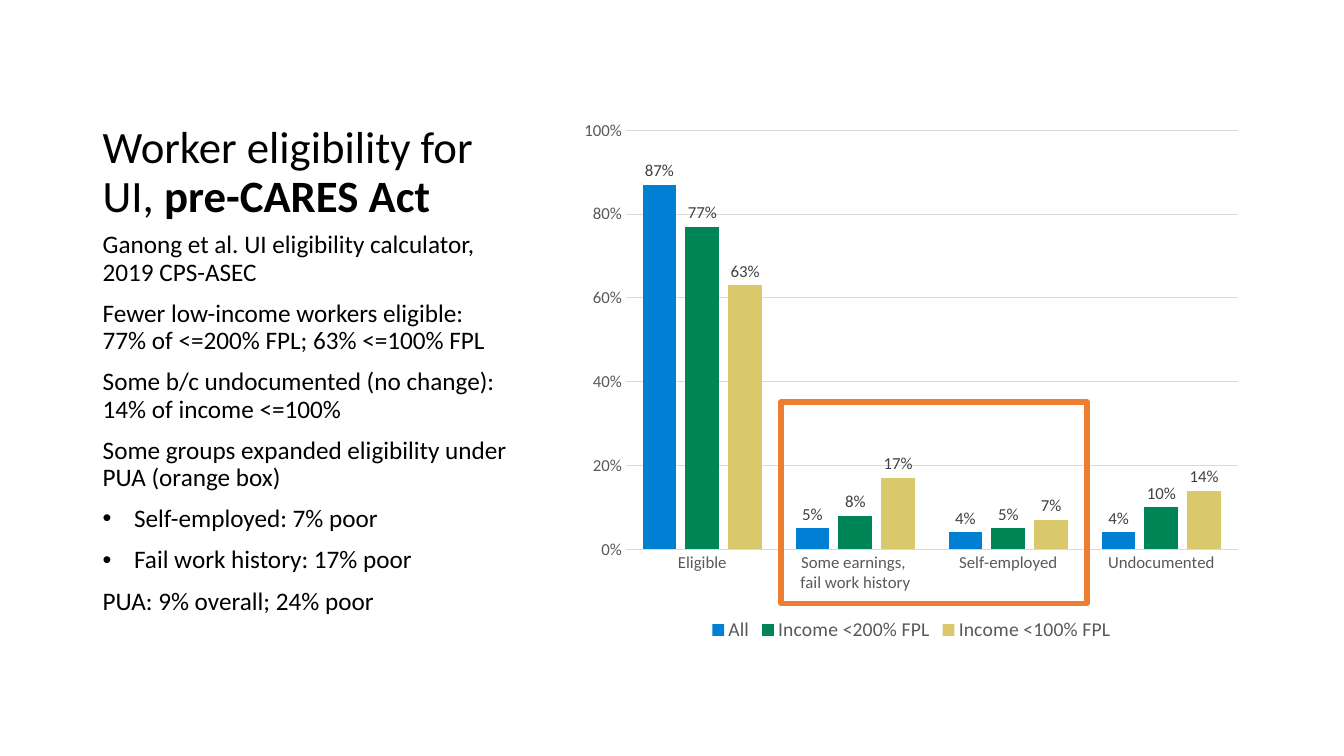
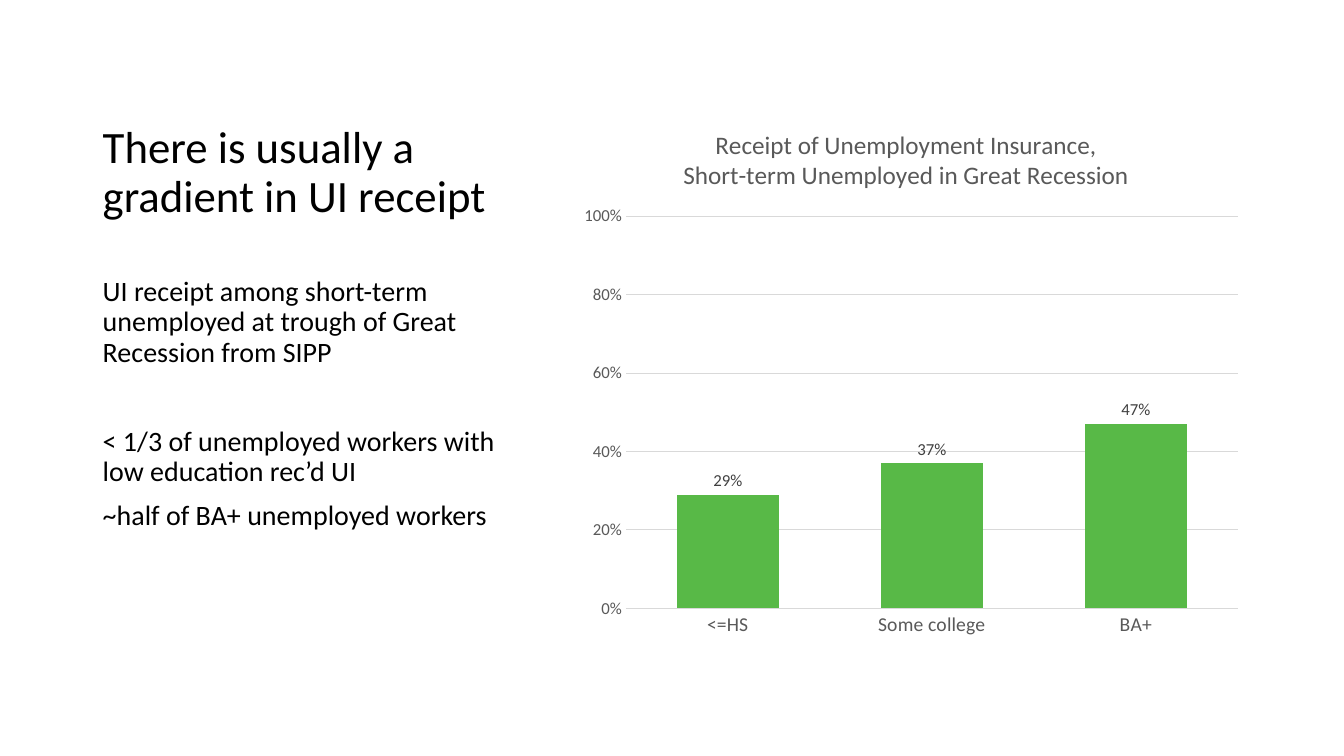
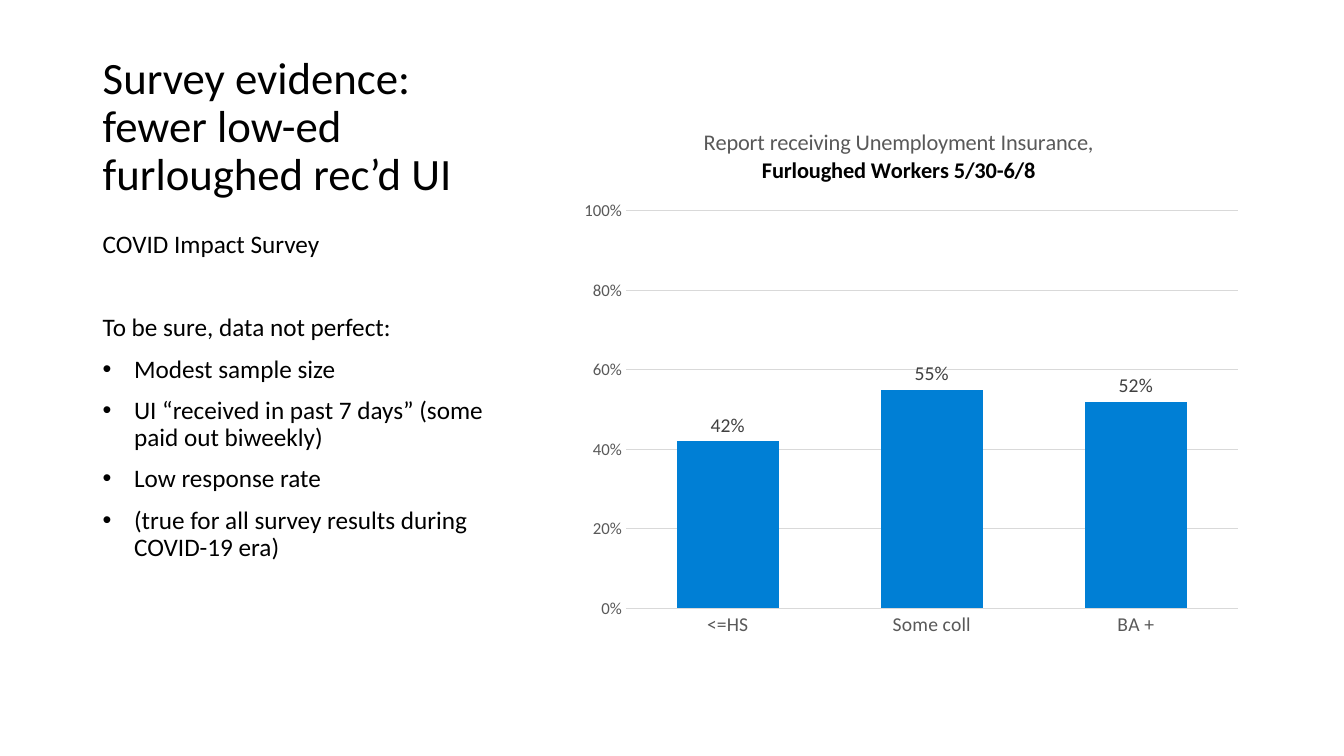
from pptx import Presentation
from pptx.chart.data import CategoryChartData
from pptx.dml.color import RGBColor
from pptx.enum.chart import XL_CHART_TYPE as ChartType, XL_LABEL_POSITION as LabelPos
from pptx.enum.chart import XL_LEGEND_POSITION as LegendPos, XL_TICK_MARK as Tick
from pptx.enum.shapes import MSO_SHAPE as Shape
from pptx.enum.text import MSO_ANCHOR as Anchor
from pptx.oxml.ns import qn
from pptx.oxml.xmlchemy import OxmlElement
from pptx.util import Cm, Pt

COLORS = {
    "text": "000000",
    "muted": "595959",
    "label": "404040",
    "rule": "D9D9D9",
    "blue": "007FD5",
    "forest": "008656",
    "sand": "D9C86C",
    "green": "58B947",
    "orange": "ED7D31",
}


def rgb(name):
    return RGBColor.from_string(COLORS[name])


class Deck:
    """Holds the shared style and the slide being built."""

    FONT = "Calibri"
    LEFT, COLUMN = Cm(2.34), Cm(10.92)
    TITLE_TOP, TITLE_HEIGHT = Cm(1.27), Cm(4.45)
    BODY_TOP, BODY_HEIGHT = Cm(5.72), Cm(10.59)
    CHART = Cm(14.4), Cm(2.74), Cm(17.14), Cm(13.54)
    INDENT = Cm(0.79)

    def __init__(self):
        self.prs = Presentation()
        self.prs.slide_width, self.prs.slide_height = Cm(33.87), Cm(19.05)
        self.slide = None

    def new_slide(self):
        self.slide = self.prs.slides.add_slide(self.prs.slide_layouts[6])

    def style(self, font, size, color="text", bold=False):
        font.name, font.size, font.bold = self.FONT, Pt(size), bold
        font.color.rgb = rgb(color)

    def add_run(self, paragraph, text, size, color="text", bold=False):
        run = paragraph.add_run()
        run.text = text
        self.style(run.font, size, color, bold)

    def text_frame(self, top, height):
        frame = self.slide.shapes.add_textbox(self.LEFT, top, self.COLUMN, height).text_frame
        frame.word_wrap = True
        return frame

    def title(self, text, strong="", anchor=Anchor.BOTTOM):
        frame = self.text_frame(self.TITLE_TOP, self.TITLE_HEIGHT)
        frame.vertical_anchor = anchor
        heading = frame.paragraphs[0]
        heading.line_spacing = 0.9
        self.add_run(heading, text, 32)
        if strong:
            self.add_run(heading, strong, 32, bold=True)

    def body(self, points, size, bullets=(), gaps=(), top_inset=0.13):
        frame = self.text_frame(self.BODY_TOP, self.BODY_HEIGHT)
        frame.margin_top = Cm(top_inset)
        for index, point in enumerate(points):
            paragraph = frame.add_paragraph() if index else frame.paragraphs[0]
            paragraph.line_spacing = 0.9
            blank_line = 1.1 * size + 10 if index in gaps else 0
            paragraph.space_before = Pt(10 + blank_line)
            for part, line in enumerate(point.split("\n")):
                if part:
                    paragraph.add_line_break()
                self.add_run(paragraph, line, size)
            if index in bullets:
                self.bullet(paragraph)

    def bullet(self, paragraph):
        props = paragraph._p.get_or_add_pPr()
        props.set("marL", str(self.INDENT))
        props.set("indent", str(-self.INDENT))
        face = OxmlElement("a:buFont")
        face.set("typeface", "Arial")
        mark = OxmlElement("a:buChar")
        mark.set("char", "•")
        props.extend([face, mark])

    def place(self, parent, position, **sides):
        old = parent.find(qn("c:layout"))
        if old is not None:
            parent.remove(old)
        layout, manual = OxmlElement("c:layout"), OxmlElement("c:manualLayout")
        settings = {"xMode": "edge", "yMode": "edge", **sides}
        if "w" in sides:
            settings = {"layoutTarget": "inner", **settings}
        for tag, value in settings.items():
            item = OxmlElement(f"c:{tag}")
            item.set("val", str(value))
            manual.append(item)
        layout.append(manual)
        parent.insert(position, layout)

    def columns(self, categories, series, plot_top, plot_height, category_size=14, label_size=12):
        data = CategoryChartData(number_format="0%")
        data.categories = categories
        for name, values, _ in series:
            data.add_series(name, values)
        chart = self.slide.shapes.add_chart(ChartType.COLUMN_CLUSTERED, *self.CHART, data).chart
        self.style(chart.font, 10)
        chart.has_title = chart.has_legend = False
        plot = chart.plots[0]
        plot.gap_width, plot.overlap, plot.vary_by_categories = 100, -27, False
        for bars, (_, _, color) in zip(plot.series, series):
            bars.format.fill.solid()
            bars.format.fill.fore_color.rgb = rgb(color)
            bars.invert_if_negative = False
            labels = bars.data_labels
            labels.show_value, labels.position = True, LabelPos.OUTSIDE_END
            labels.number_format, labels.number_format_is_linked = "0%", False
            self.style(labels.font, label_size, "label")
        self.axes(chart, category_size)
        area = chart.element.find(".//" + qn("c:plotArea"))
        self.place(area, 0, x=0.08, y=plot_top, w=0.9, h=plot_height)
        return chart

    def axes(self, chart, category_size):
        across, up = chart.category_axis, chart.value_axis
        for axis, size in ((across, category_size), (up, 12)):
            axis.major_tick_mark = axis.minor_tick_mark = Tick.NONE
            self.style(axis.tick_labels.font, size, "muted")
        up.minimum_scale, up.maximum_scale, up.major_unit = 0, 1, 0.2
        up.tick_labels.number_format = "0%"
        up.tick_labels.number_format_is_linked = False
        up.has_major_gridlines = True
        up.format.line.fill.background()
        for line in (across.format.line, up.major_gridlines.format.line):
            line.color.rgb, line.width = rgb("rule"), Pt(0.75)

    def legend(self, chart):
        chart.has_legend = True
        chart.legend.position = LegendPos.BOTTOM
        chart.legend.include_in_layout = False
        self.style(chart.legend.font, 14, "muted")

    def chart_title(self, chart, lines, size, left):
        chart.has_title = True
        frame = chart.chart_title.text_frame
        for index, (text, color, bold) in enumerate(lines):
            paragraph = frame.add_paragraph() if index else frame.paragraphs[0]
            self.add_run(paragraph, text, size, color, bold)
        self.place(chart.chart_title.element, 1, x=left, y=0.03)

    def highlight(self, left, top, width, height):
        frame = self.slide.shapes.add_shape(Shape.RECTANGLE, left, top, width, height)
        frame.shadow.inherit = False
        frame.fill.background()
        frame.line.color.rgb, frame.line.width = rgb("orange"), Pt(4)


def eligibility(deck):
    deck.new_slide()
    deck.title("Worker eligibility for UI, ", "pre-CARES Act")
    deck.body([
        "Ganong et al. UI eligibility calculator, 2019 CPS-ASEC",
        "Fewer low-income workers eligible:\n77% of <=200% FPL; 63% <=100% FPL",
        "Some b/c undocumented (no change): 14% of income <=100%",
        "Some groups expanded eligibility under PUA (orange box)",
        "Self-employed: 7% poor",
        "Fail work history: 17% poor",
        "PUA: 9% overall; 24% poor",
    ], 18, bullets=(4, 5))
    workers = deck.columns(
        ["Eligible", "Some earnings, \nfail work history", "Self-employed", "Undocumented"],
        [
            ("All", (0.87, 0.05, 0.04, 0.04), "blue"),
            ("Income <200% FPL", (0.77, 0.08, 0.05, 0.1), "forest"),
            ("Income <100% FPL", (0.63, 0.17, 0.07, 0.14), "sand"),
        ], 0.04, 0.78, category_size=12)
    deck.legend(workers)
    deck.highlight(Cm(19.69), Cm(10.13), Cm(7.7), Cm(5.08))


def gradient(deck):
    deck.new_slide()
    deck.title("There is usually a gradient in UI receipt")
    deck.body([
        "UI receipt among short-term unemployed at trough of Great Recession from SIPP",
        "< 1/3 of unemployed workers with low education rec’d UI",
        "~half of BA+ unemployed workers",
    ], 20, gaps=(1,), top_inset=1.27)
    receipt = deck.columns(["<=HS", "Some college", "BA+"],
                           [("Series 1", (0.29, 0.37, 0.47), "green")], 0.2, 0.73)
    deck.chart_title(receipt, [
        ("Receipt of Unemployment Insurance,", "muted", False),
        ("Short-term Unemployed in Great Recession", "muted", False),
    ], 18, 0.16)


def survey(deck):
    deck.new_slide()
    deck.title("Survey evidence: fewer low-ed furloughed rec’d UI", anchor=Anchor.TOP)
    furloughed = deck.columns(["<=HS", "Some coll", "BA +"],
                              [("Series 1", (0.42, 0.55, 0.52), "blue")],
                              0.19, 0.74, label_size=14)
    deck.chart_title(furloughed, [
        ("Report receiving Unemployment Insurance,", "muted", False),
        ("Furloughed Workers 5/30-6/8", "text", True),
    ], 16, 0.19)
    deck.body([
        "COVID Impact Survey",
        "To be sure, data not perfect:",
        "Modest sample size",
        "UI “received in past 7 days” (some paid out biweekly)",
        "Low response rate",
        "(true for all survey results during COVID-19 era)",
    ], 18, bullets=range(2, 6), gaps=(1,))


def main():
    deck = Deck()
    for build in (eligibility, gradient, survey):
        build(deck)
    deck.prs.save("out.pptx")


if __name__ == "__main__":
    main()
